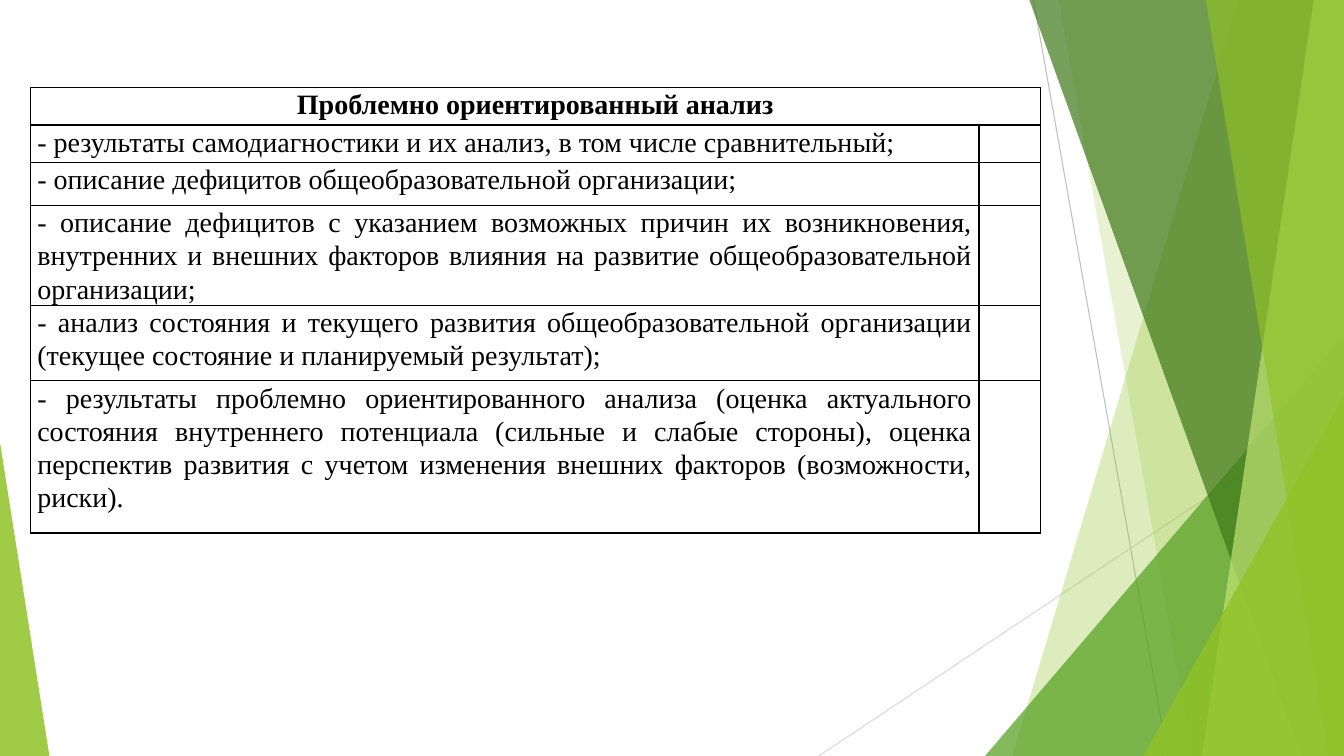
"""Builds the slide with the problem-oriented analysis table."""
from dataclasses import dataclass

from lxml.etree import SubElement
from pptx import Presentation
from pptx.dml.color import RGBColor as Rgb
from pptx.enum.shapes import MSO_CONNECTOR as Connector, MSO_SHAPE as Preset
from pptx.enum.text import PP_ALIGN as Align
from pptx.oxml.ns import qn
from pptx.util import Inches, Pt

COLORS = {
    "lime": "90C226", "green": "54A021", "forest": "3F7819", "pale": "C0E474",
    "gray": "BFBFBF", "light_gray": "D9D9D9", "black": "000000",
}
WIDTH, HEIGHT = 13.33, 7.5
COLUMNS = [9.41, 0.61]
ROWS = [0.37, 0.37, 0.43, 0.68, 0.75, 1.51]
HEADING = "Проблемно ориентированный анализ"
CRITERIA = [
    "- результаты самодиагностики и их анализ, в том числе сравнительный;",
    "- описание дефицитов общеобразовательной организации;",
    "- описание дефицитов с указанием возможных причин их возникновения, внутренних "
    "и внешних факторов влияния на развитие общеобразовательной организации;",
    "- анализ состояния и текущего развития общеобразовательной организации "
    "(текущее состояние и планируемый результат);",
    "- результаты проблемно ориентированного анализа (оценка актуального состояния "
    "внутреннего потенциала (сильные и слабые стороны), оценка перспектив развития "
    "с учетом изменения внешних факторов (возможности, риски).",
]
CELL_FORMAT = {
    "margin_left": Inches(0.07), "margin_right": Inches(0.07),
    "margin_top": 0, "margin_bottom": 0,
}
PARAGRAPH_FORMAT = {"line_spacing": 1.07, "space_after": Pt(8)}
FONT_FORMAT = {"name": "Times New Roman", "size": Pt(20)}


@dataclass
class Ray:
    start: tuple[float, float]
    end: tuple[float, float]
    color: str


@dataclass
class Band:
    top_x: float
    bottom_x: float
    color: str
    opacity: int


@dataclass
class Wedge:
    left: float
    top: float
    width: float
    apex: float
    color: str
    opacity: int


DECOR = [
    Ray((10.25, 0), (11.58, HEIGHT), "gray"),
    Ray((WIDTH, 4.03), (8.12, HEIGHT), "light_gray"),
    Band(12.28, 10.04, "lime", 30),
    Band(10.5, 11.83, "lime", 20),
    Wedge(9.77, 3.33, 3.56, 1, "green", 72),
    Band(10.21, 12.91, "forest", 70),
    Band(13.03, 11.92, "pale", 70),
    Band(11.96, 13.18, "lime", 65),
    Wedge(11.34, 3.93, 1.99, 1, "lime", 80),
    Wedge(0, 4.39, 0.49, 0, "lime", 85),
]


def apply_format(target, values: dict) -> None:
    for name, value in values.items():
        setattr(target, name, value)


def paint(shape, color: str, opacity: int) -> None:
    shape.shadow.inherit = False
    shape.line.fill.background()
    shape.fill.solid()
    shape.fill.fore_color.rgb = Rgb.from_string(COLORS[color])
    tint = shape.element.spPr.find(qn("a:solidFill"))[0]
    SubElement(tint, qn("a:alpha"), val=str(opacity * 1000))


def draw_ray(shapes, ray: Ray) -> None:
    points = [Inches(value) for value in (*ray.start, *ray.end)]
    line = shapes.add_connector(Connector.STRAIGHT, *points)
    line.line.color.rgb = Rgb.from_string(COLORS[ray.color])
    line.line.width = Pt(0.75)
    SubElement(line.element.spPr, qn("a:effectLst"))


def draw_band(shapes, band: Band) -> None:
    corners = [(band.top_x, 0), (WIDTH, 0), (WIDTH, HEIGHT), (band.bottom_x, HEIGHT)]
    start, *others = [(Inches(x), Inches(y)) for x, y in corners]
    outline = shapes.build_freeform(*start)
    outline.add_line_segments(others, close=True)
    paint(outline.convert_to_shape(), band.color, band.opacity)


def draw_wedge(shapes, wedge: Wedge) -> None:
    box = (wedge.left, wedge.top, wedge.width, HEIGHT - wedge.top)
    triangle = shapes.add_shape(Preset.ISOSCELES_TRIANGLE, *map(Inches, box))
    triangle.adjustments[0] = wedge.apex
    paint(triangle, wedge.color, wedge.opacity)


def style_cell(cell) -> None:
    apply_format(cell, CELL_FORMAT)
    properties = cell._tc.get_or_add_tcPr()
    for side in ("lnL", "lnR", "lnT", "lnB"):
        border = SubElement(properties, qn(f"a:{side}"), w=str(Pt(1)))
        fill = SubElement(border, qn("a:solidFill"))
        SubElement(fill, qn("a:srgbClr"), val=COLORS["black"])
    cell.fill.background()


def write_cell(cell, text: str, align: Align, bold: bool) -> None:
    paragraph = cell.text_frame.paragraphs[0]
    apply_format(paragraph, PARAGRAPH_FORMAT | {"alignment": align})
    run = paragraph.add_run()
    run.text = text
    apply_format(run.font, FONT_FORMAT | {"bold": bold})
    run.font.color.rgb = Rgb.from_string(COLORS["black"])


def draw_analysis(shapes) -> None:
    box = (0.3, 0.87, sum(COLUMNS), sum(ROWS))
    analysis = shapes.add_table(len(ROWS), len(COLUMNS), *map(Inches, box)).table
    apply_format(analysis, {"first_row": False, "horz_banding": False})
    for column, width in zip(analysis.columns, COLUMNS):
        column.width = Inches(width)
    for row, height in zip(analysis.rows, ROWS):
        row.height = Inches(height)
    for cell in analysis.iter_cells():
        style_cell(cell)
    heading = analysis.cell(0, 0)
    heading.merge(analysis.cell(0, 1))
    write_cell(heading, HEADING, Align.CENTER, True)
    for index, criterion in enumerate(CRITERIA, start=1):
        write_cell(analysis.cell(index, 0), criterion, Align.JUSTIFY, False)


def main() -> None:
    deck = Presentation()
    apply_format(deck, {"slide_width": Inches(WIDTH), "slide_height": Inches(HEIGHT)})
    shapes = deck.slides.add_slide(deck.slide_layouts[6]).shapes
    painters = {Ray: draw_ray, Band: draw_band, Wedge: draw_wedge}
    for part in DECOR:
        painters[type(part)](shapes, part)
    draw_analysis(shapes)
    deck.save("out.pptx")


if __name__ == "__main__":
    main()
